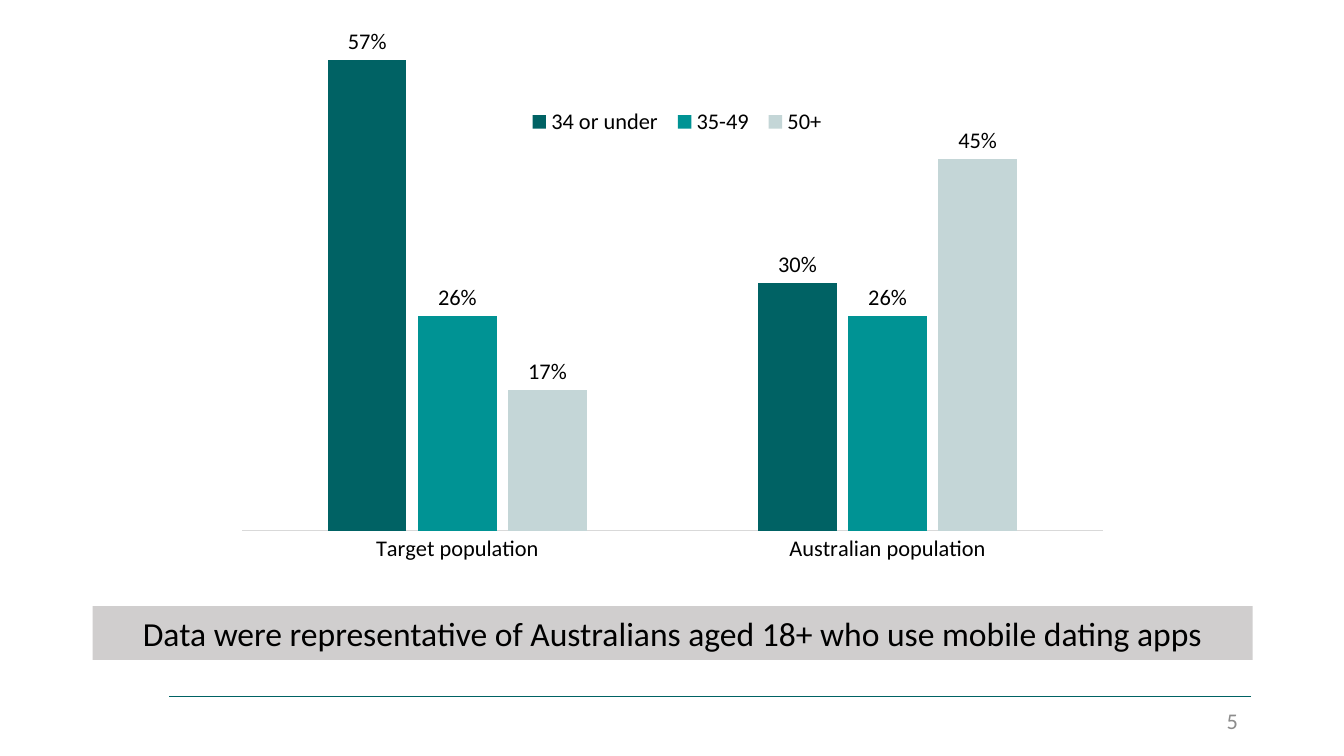
from lxml import etree
from pptx import Presentation
from pptx.chart.data import CategoryChartData
from pptx.dml.color import RGBColor
from pptx.enum.chart import XL_CHART_TYPE as ChartType, XL_LABEL_POSITION as LabelPosition
from pptx.enum.chart import XL_LEGEND_POSITION as LegendPosition, XL_TICK_MARK as TickMark
from pptx.enum.shapes import MSO_CONNECTOR as Connector, MSO_SHAPE as Shape
from pptx.enum.text import MSO_ANCHOR as Anchor, PP_ALIGN as Align
from pptx.oxml.ns import qn
from pptx.util import Pt


def style(font, size, color="000000"):
    font.name = "Calibri"
    font.size = Pt(size)
    font.color.rgb = RGBColor.from_string(color)


def place(part, index, **fractions):
    """Fix a chart part at x, y, w, h, given as fractions of the chart."""
    for old in part.findall(qn("c:layout")):
        part.remove(old)
    layout = etree.Element(qn("c:layout"))
    part.insert(index, layout)
    manual = etree.SubElement(layout, qn("c:manualLayout"))
    if part.tag == qn("c:plotArea"):
        etree.SubElement(manual, qn("c:layoutTarget"), val="inner")
    for mode in ("xMode", "yMode"):
        etree.SubElement(manual, qn(f"c:{mode}"), val="edge")
    for name, value in fractions.items():
        etree.SubElement(manual, qn(f"c:{name}"), val=str(value))


prs = Presentation()
prs.slide_width, prs.slide_height = Pt(720), Pt(405)
slide = prs.slides.add_slide(prs.slide_layouts[6])
shapes = slide.shapes

# Footer
footer_rule = shapes.add_connector(Connector.STRAIGHT, Pt(670.3), Pt(373), Pt(90.7), Pt(373))
footer_rule.line.color.rgb = RGBColor.from_string("006264")
footer_rule.line.width = Pt(0.5)
etree.SubElement(footer_rule._element.spPr, qn("a:effectLst"))

page_number = shapes.add_textbox(Pt(508.3), Pt(375.1), Pt(162), Pt(21.6)).text_frame
page_number.word_wrap = True
page_number.vertical_anchor = Anchor.MIDDLE
page_number.paragraphs[0].alignment = Align.RIGHT
number = page_number.paragraphs[0].add_run()
number.text = "5"
style(number.font, 12, "8C8C8C")

# Age groups by population
age_groups = [
    ("34 or under", (0.57, 0.30), "006264"),
    ("35-49", (0.26, 0.26), "009394"),
    ("50+", (0.17, 0.45), "C4D6D7"),
]
age_data = CategoryChartData(number_format="0%")
age_data.categories = ["Target population", "Australian population"]
for group, shares, _ in age_groups:
    age_data.add_series(group, shares)
chart = shapes.add_chart(ChartType.COLUMN_CLUSTERED, Pt(120.2), Pt(-13), Pt(480.2), Pt(319.7), age_data).chart
style(chart.font, 10)
chart.has_title = False

share_axis = chart.value_axis
share_axis.minimum_scale, share_axis.maximum_scale = 0, 0.6
share_axis.has_major_gridlines = False
share_axis.visible = False

population_axis = chart.category_axis
population_axis.major_tick_mark = TickMark.NONE
population_axis.format.line.color.rgb = RGBColor.from_string("D9D9D9")
population_axis.format.line.width = Pt(0.75)
style(population_axis.tick_labels.font, 12)

chart.has_legend = True
chart.legend.position = LegendPosition.TOP
chart.legend.include_in_layout = False
style(chart.legend.font, 12)

plot = chart.plots[0]
plot.gap_width, plot.overlap = 219, -15
plot.vary_by_categories = False
for series, (_, _, color) in zip(plot.series, age_groups):
    series.format.fill.solid()
    series.format.fill.fore_color.rgb = RGBColor.from_string(color)
    series.invert_if_negative = False
    labels = series.data_labels
    labels.show_value = True
    labels.number_format = "0%"
    labels.number_format_is_linked = False
    labels.position = LabelPosition.OUTSIDE_END
    style(labels.font, 12)

place(chart._chartSpace.chart.plotArea, 0, x=0.02, y=0.1, w=0.96, h=0.83)
place(chart.legend._element, 1, x=0.33, y=0.21, w=0.35, h=0.07)

# Conclusion
conclusion = shapes.add_shape(Shape.RECTANGLE, Pt(49.7), Pt(324.7), Pt(621.4), Pt(28.8))
conclusion.shadow.inherit = False
conclusion.fill.solid()
conclusion.fill.fore_color.rgb = RGBColor.from_string("D0CECE")
conclusion.line.fill.background()
conclusion.text_frame.word_wrap = True
conclusion.text_frame.vertical_anchor = Anchor.TOP
conclusion.text_frame.paragraphs[0].alignment = Align.CENTER
message = conclusion.text_frame.paragraphs[0].add_run()
message.text = "Data were representative of Australians aged 18+ who use mobile dating apps"
style(message.font, 18)

prs.save("out.pptx")
